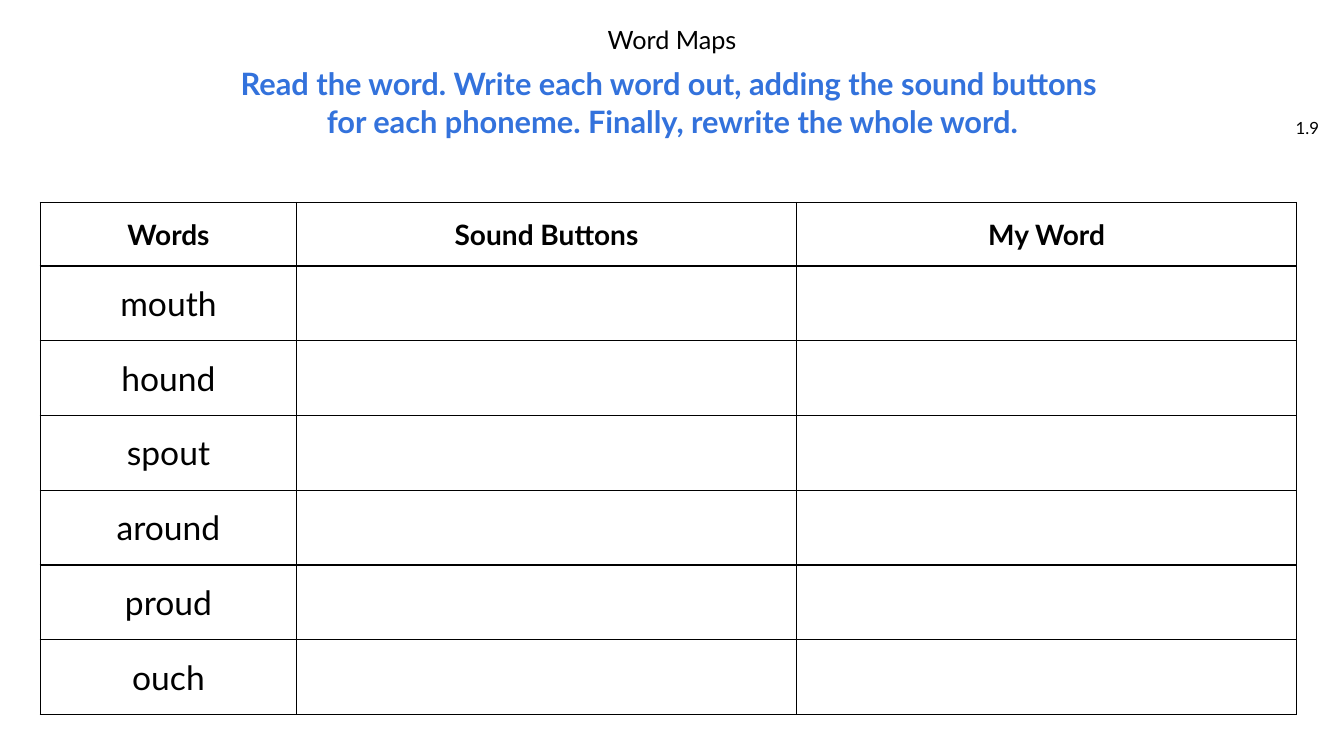
from lxml.etree import SubElement
from pptx import Presentation
from pptx.dml.color import RGBColor
from pptx.enum.text import MSO_ANCHOR, PP_ALIGN
from pptx.oxml.ns import qn
from pptx.util import Inches, Pt

BLACK = RGBColor(0x00, 0x00, 0x00)
WHITE = RGBColor(0xFF, 0xFF, 0xFF)
BLUE = RGBColor(0x33, 0x72, 0xDC)
FONT = "Lato"
WIDTH, HEIGHT = Inches(13.33), Inches(7.5)

TITLE = (28.66, 3.07, 42.69, 4.67)
TASK = (14.78, 8, 70.52, 10.93)
NUMBER = (94.15, 14.27, 4.73, 5.33)
GRID = (3, 26.8, 93.47, 67.73)

HEADS = ["Words", "Sound Buttons", "My Word"]
WORDS = ["mouth", "hound", "spout", "around", "proud", "ouch"]
COLS = [20.4, 39.8, 39.8]
HEAD_ROW = 12.4


def place(box):
    """Turn percentages of the slide into a left, top, width and height."""
    return [int(side * part / 100) for side, part in zip((WIDTH, HEIGHT) * 2, box)]


def style(frame, size, color=BLACK, bold=False, align=PP_ALIGN.CENTER, line=None):
    """Format every paragraph and run of a text frame."""
    for para in frame.paragraphs:
        para.alignment = align
        para.line_spacing = line
        for run in para.runs:
            font = run.font
            font.name, font.size, font.bold = FONT, Pt(size), bold
            font.color.rgb = color


def add_text(slide, box, text, size, anchor=MSO_ANCHOR.MIDDLE, **look):
    """Place wrapped text in the given box."""
    frame = slide.shapes.add_textbox(*place(box)).text_frame
    frame.word_wrap = True
    frame.vertical_anchor = anchor
    frame.text = text
    style(frame, size, **look)


def add_edges(cell):
    """Draw a thin black line on each side of a cell."""
    props = cell._tc.get_or_add_tcPr()
    for side in ("lnL", "lnR", "lnT", "lnB"):
        edge = SubElement(props, qn(f"a:{side}"), w=str(Pt(1)))
        fill = SubElement(edge, qn("a:solidFill"))
        SubElement(fill, qn("a:srgbClr"), val=str(BLACK))


def add_grid(slide, box):
    """Build the word table, with blank cells to write in."""
    left, top, width, height = place(box)
    rows = [HEADS] + [[word, "", ""] for word in WORDS]
    table = slide.shapes.add_table(len(rows), len(COLS), left, top, width, height).table
    table.first_row = table.horz_banding = False
    for col, share in zip(table.columns, COLS):
        col.width = int(width * share / 100)
    word_row = (100 - HEAD_ROW) / len(WORDS)
    for i, texts in enumerate(rows):
        head = i == 0
        table.rows[i].height = int(height * (HEAD_ROW if head else word_row) / 100)
        for j, text in enumerate(texts):
            cell = table.cell(i, j)
            add_edges(cell)
            cell.fill.solid()
            cell.fill.fore_color.rgb = WHITE
            cell.vertical_anchor = MSO_ANCHOR.MIDDLE
            cell.text_frame.text = text
            style(cell.text_frame, 20 if head else 24, bold=head)


def add_header(slide):
    """Place the title, the task and the lesson number."""
    add_text(slide, TITLE, "Word Maps", 18, MSO_ANCHOR.TOP, line=0.9)
    task = ("Read the word. Write each word out, adding the sound buttons \n"
            "for each phoneme. Finally, rewrite the whole word.")
    add_text(slide, TASK, task, 22, color=BLUE, bold=True, line=Pt(27))
    add_text(slide, NUMBER, "1.9", 12, align=PP_ALIGN.RIGHT)


def main():
    """Build and save the slide."""
    deck = Presentation()
    deck.slide_width, deck.slide_height = WIDTH, HEIGHT
    slide = deck.slides.add_slide(deck.slide_layouts[6])
    add_header(slide)
    add_grid(slide, GRID)
    deck.save("out.pptx")


if __name__ == "__main__":
    main()
